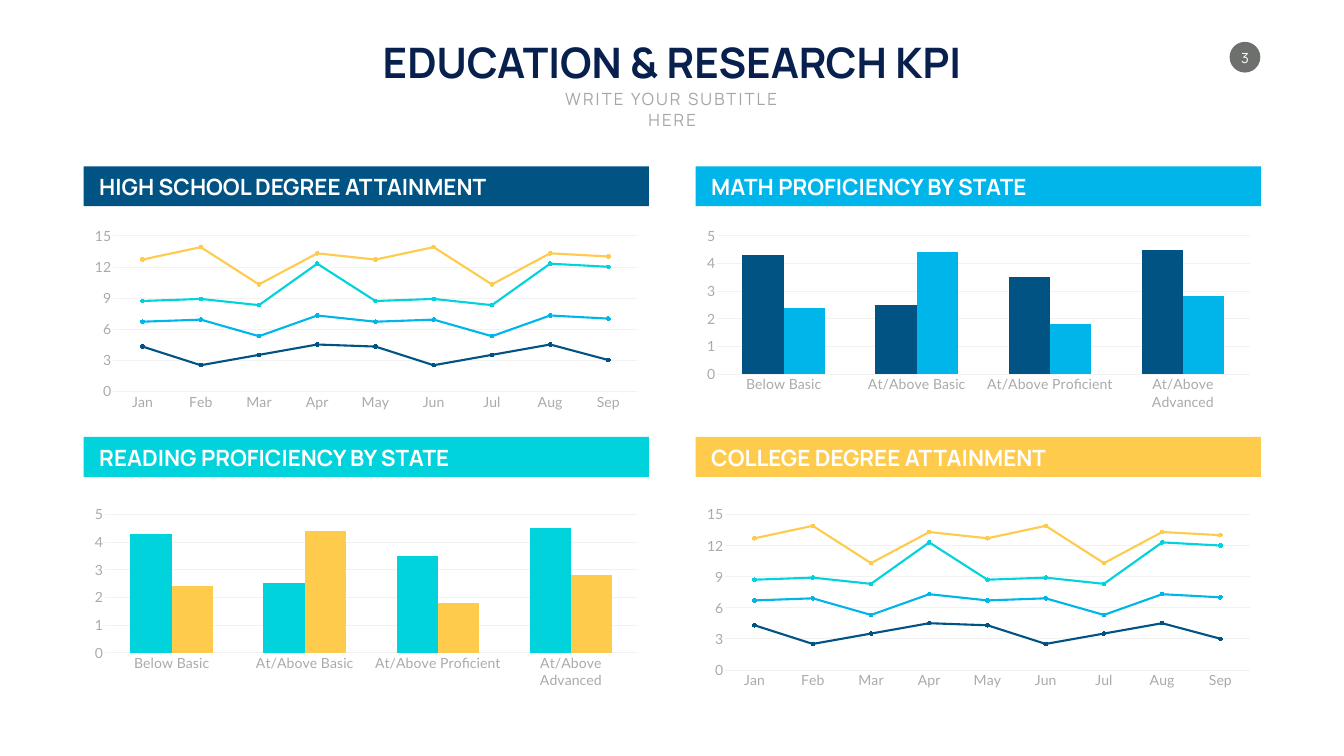
from pptx import Presentation
from pptx.chart.data import CategoryChartData
from pptx.dml.color import RGBColor
from pptx.enum.chart import XL_CHART_TYPE as CT, XL_MARKER_STYLE, XL_TICK_MARK
from pptx.enum.shapes import MSO_SHAPE
from pptx.enum.text import MSO_ANCHOR, MSO_AUTO_SIZE, PP_ALIGN
from pptx.util import Inches, Pt

NAVY = RGBColor(0x08, 0x20, 0x4D)
BLUE = RGBColor(0x01, 0x53, 0x84)
SKY = RGBColor(0x00, 0xB5, 0xE9)
TEAL = RGBColor(0x00, 0xD3, 0xDB)
YELLOW = RGBColor(0xFE, 0xCB, 0x4C)
WHITE = RGBColor(0xFF, 0xFF, 0xFF)
BADGE = RGBColor(0x6D, 0x70, 0x6D)
SUBTITLE = RGBColor(0xA6, 0xA6, 0xA6)
LABEL = RGBColor(0xAA, 0xAA, 0xAA)
GRID = RGBColor(0xF2, 0xF2, 0xF2)

MONTHS = ["Jan", "Feb", "Mar", "Apr", "May", "Jun", "Jul", "Aug", "Sep"]
LEVELS = ["Below Basic", "At/Above Basic", "At/Above Proficient", "At/Above Advanced"]
ATTAINMENT = [
    (4.3, 2.5, 3.5, 4.5, 4.3, 2.5, 3.5, 4.5, 3),
    (2.4, 4.4, 1.8, 2.8, 2.4, 4.4, 1.8, 2.8, 4),
    (2, 2, 3, 5, 2, 2, 3, 5, 5),
    (4, 5, 2, 1, 4, 5, 2, 1, 1),
]
PROFICIENCY = [(4.3, 2.5, 3.5, 4.5), (2.4, 4.4, 1.8, 2.8)]

LINE_COLORS = (BLUE, SKY, TEAL, YELLOW)
COLUMNS, ROWS = (1.66, 13.8), (3.3, 8.67)
PANEL_W, BAR_H, CHART_H = 11.21, 0.79, 3.79
# Distance from the top of the panel to its chart, by row
CHART_DROP = (1.13, 1.29)


def add_text(slide, box, text, size, color, bold=False, align=PP_ALIGN.LEFT,
             anchor=MSO_ANCHOR.TOP, wrap=False, inset=None, spacing=None):
    tf = slide.shapes.add_textbox(*map(Inches, box)).text_frame
    frame = {"word_wrap": wrap, "vertical_anchor": anchor,
             "auto_size": MSO_AUTO_SIZE.SHAPE_TO_FIT_TEXT}
    if inset is not None:
        for side in ("left", "top", "right", "bottom"):
            frame["margin_" + side] = Inches(inset)
    for name, value in frame.items():
        setattr(tf, name, value)
    p = tf.paragraphs[0]
    p.alignment = align
    r = p.add_run()
    r.text = text
    for name, value in {"name": "Manrope", "size": Pt(size), "bold": bold}.items():
        setattr(r.font, name, value)
    r.font.color.rgb = color
    if spacing:
        r.font._element.set("spc", str(spacing * 100))


def add_filled(slide, kind, box, color):
    sp = slide.shapes.add_shape(kind, *map(Inches, box))
    sp.shadow.inherit = False
    sp.fill.solid()
    sp.fill.fore_color.rgb = color
    sp.line.fill.background()


def add_header(slide):
    center = PP_ALIGN.CENTER
    add_text(slide, (7.26, 0.67, 12.14, 1.11), "EDUCATION & RESEARCH KPI", 60, NAVY,
             bold=True, align=center)
    add_text(slide, (10.62, 1.72, 5.43, 0.5), "WRITE YOUR SUBTITLE HERE", 24, SUBTITLE,
             align=center, wrap=True, spacing=3)
    # Page number
    add_filled(slide, MSO_SHAPE.OVAL, (24.39, 0.83, 0.61, 0.61), BADGE)
    add_text(slide, (24.49, 0.97, 0.41, 0.34), "3", 20, WHITE, align=center,
             anchor=MSO_ANCHOR.MIDDLE, inset=0)


def set_font(font):
    for name, value in {"name": "Lato", "size": Pt(20), "bold": False}.items():
        setattr(font, name, value)
    font.color.rgb = LABEL


def set_line(line, color, width):
    line.color.rgb = color
    line.width = Pt(width)


def style_axes(chart, top, step):
    cat, val = chart.category_axis, chart.value_axis
    for axis in (cat, val):
        axis.major_tick_mark = axis.minor_tick_mark = XL_TICK_MARK.NONE
        set_font(axis.tick_labels.font)
    set_line(cat.format.line, GRID, 0.75)
    scale = {"minimum_scale": 0, "maximum_scale": top, "major_unit": step,
             "has_major_gridlines": True}
    for name, value in scale.items():
        setattr(val, name, value)
    val.format.line.fill.background()
    set_line(val.major_gridlines.format.line, GRID, 0.75)


def add_chart(slide, box, kind, categories, rows, colors, top, step):
    data = CategoryChartData()
    data.categories = categories
    for i, values in enumerate(rows, 1):
        data.add_series(f"Series {i}", values)
    chart = slide.shapes.add_chart(kind, *map(Inches, box), data).chart
    chart.has_title = chart.has_legend = False
    set_font(chart.font)
    style_axes(chart, top, step)
    plot = chart.plots[0]
    plot.vary_by_categories = False
    if kind == CT.COLUMN_CLUSTERED:
        plot.gap_width, plot.overlap = 122, 0
    for series, color in zip(plot.series, colors):
        if kind == CT.COLUMN_CLUSTERED:
            fills = [series.format.fill]
        else:
            series.smooth = False
            set_line(series.format.line, color, 3)
            marker = series.marker
            marker.style, marker.size = XL_MARKER_STYLE.CIRCLE, 5
            marker.format.line.fill.background()
            fills = [marker.format.fill]
        for fill in fills:
            fill.solid()
            fill.fore_color.rgb = color


def add_panel(slide, x, y, drop, title, title_w, color, chart_args):
    add_filled(slide, MSO_SHAPE.RECTANGLE, (x, y, PANEL_W, BAR_H), color)
    add_text(slide, (x + 0.21, y + 0.08, title_w, 0.64), title, 32, WHITE, bold=True,
             anchor=MSO_ANCHOR.MIDDLE)
    add_chart(slide, (x, y + drop, PANEL_W, CHART_H), *chart_args)


def line_chart():
    return CT.LINE_MARKERS_STACKED, MONTHS, ATTAINMENT, LINE_COLORS, 15, 3


def column_chart(*colors):
    return CT.COLUMN_CLUSTERED, LEVELS, PROFICIENCY, colors, 5, 1


def main():
    prs = Presentation()
    prs.slide_width, prs.slide_height = Inches(26.66), Inches(15)
    slide = prs.slides.add_slide(prs.slide_layouts[6])
    add_header(slide)
    # Panels in reading order: title, title width, colour, chart
    panels = [
        ("HIGH SCHOOL DEGREE ATTAINMENT", 8.09, BLUE, line_chart()),
        ("MATH PROFICIENCY BY STATE", 6.8, SKY, column_chart(BLUE, SKY)),
        ("READING PROFICIENCY BY STATE", 7.47, TEAL, column_chart(TEAL, YELLOW)),
        ("COLLEGE DEGREE ATTAINMENT", 6.95, YELLOW, line_chart()),
    ]
    for i, panel in enumerate(panels):
        row, col = divmod(i, 2)
        add_panel(slide, COLUMNS[col], ROWS[row], CHART_DROP[row], *panel)
    prs.save("out.pptx")


if __name__ == "__main__":
    main()
